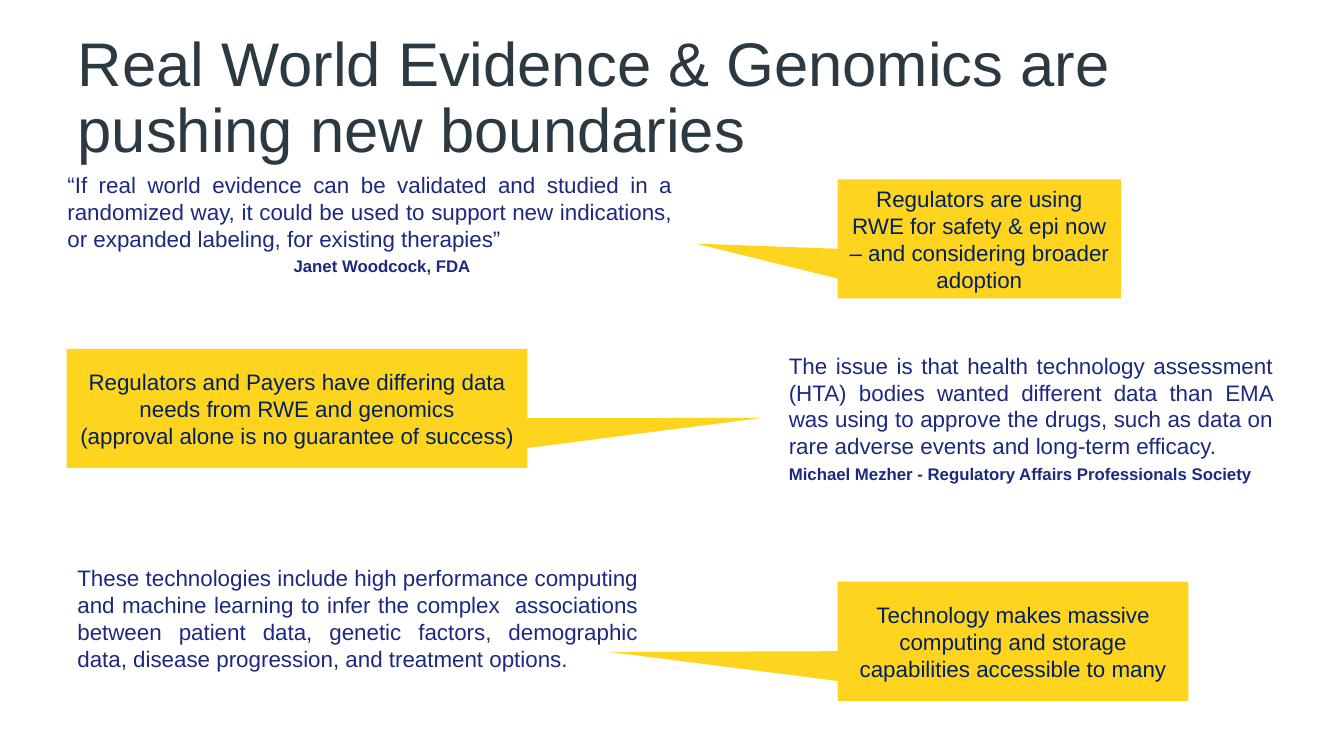
from dataclasses import dataclass

from pptx import Presentation
from pptx.dml.color import RGBColor
from pptx.enum.shapes import MSO_SHAPE
from pptx.enum.text import MSO_ANCHOR, MSO_AUTO_SIZE, PP_ALIGN
from pptx.util import Cm, Pt


@dataclass(frozen=True)
class Theme:
    font: str = "Arial"
    title_color: RGBColor = RGBColor(0x2B, 0x3A, 0x42)
    quote_color: RGBColor = RGBColor(0x1C, 0x29, 0x80)
    callout_color: RGBColor = RGBColor(0x00, 0x20, 0x60)
    callout_fill: RGBColor = RGBColor(0xFF, 0xD4, 0x1E)
    title_size: int = 44
    body_size: int = 16
    source_size: int = 12


@dataclass(frozen=True)
class Box:
    """Position and size in centimetres."""
    left: float
    top: float
    width: float
    height: float

    def lengths(self) -> tuple:
        return Cm(self.left), Cm(self.top), Cm(self.width), Cm(self.height)


@dataclass(frozen=True)
class Quote:
    box: Box
    text: str
    source: str = ""
    source_indent: float = 0
    has_margins: bool = True


@dataclass(frozen=True)
class Callout:
    """A box whose tip is offset from its centre in shares of its size."""
    box: Box
    tip: tuple[float, float]
    lines: tuple[str, ...]


THEME = Theme()
CALLOUT_HEIGHT = 3.0
RIGHT_CALLOUT_LEFT = 21.11

TITLE = "Real World Evidence & Genomics are pushing new boundaries"
TITLE_BOX = Box(1.7, 0.71, 30.48, 3.18)

QUOTES = (
    Quote(
        Box(1.7, 4.32, 15.24, 3.18),
        "“If real world evidence can be validated and studied in a randomized way, "
        "it could be used to support new indications, or expanded labeling, "
        "for existing therapies”",
        "Janet Woodcock, FDA",
        source_indent=5.7,
        has_margins=False,
    ),
    Quote(
        Box(19.63, 8.74, 12.7, 3.61),
        "The issue is that health technology assessment (HTA) bodies wanted "
        "different data than EMA was using to approve the drugs, such as data on "
        "rare adverse events and long-term efficacy.",
        "Michael Mezher - Regulatory Affairs Professionals Society",
    ),
    Quote(
        Box(1.7, 14.1, 14.63, 3.68),
        "These technologies include high performance computing and machine learning "
        "to infer the complex  associations between patient data, genetic factors, "
        "demographic data, disease progression, and treatment options.",
    ),
)

CALLOUTS = (
    Callout(
        Box(RIGHT_CALLOUT_LEFT, 4.52, 7.14, CALLOUT_HEIGHT),
        (-1.0, 0.04),
        ("Regulators are using RWE for safety & epi now – and considering broader adoption",),
    ),
    Callout(
        Box(1.68, 8.79, 11.61, CALLOUT_HEIGHT),
        (1.01, 0.08),
        (
            "Regulators and Payers have differing data needs from RWE and genomics",
            "(approval alone is no guarantee of success)",
        ),
    ),
    Callout(
        Box(RIGHT_CALLOUT_LEFT, 14.66, 8.84, CALLOUT_HEIGHT),
        (-1.15, 0.09),
        ("Technology makes massive computing and storage capabilities accessible to many",),
    ),
)


def write(paragraph, text: str, size: int, color: RGBColor, align: PP_ALIGN,
          bold: bool = False) -> None:
    paragraph.text = text
    paragraph.alignment = align
    font = paragraph.font
    font.name, font.size, font.bold = THEME.font, Pt(size), bold
    font.color.rgb = color


def fill_title(slide) -> None:
    title = slide.shapes.title
    title.left, title.top, title.width, title.height = TITLE_BOX.lengths()
    frame = title.text_frame
    frame.word_wrap = True
    frame.auto_size = MSO_AUTO_SIZE.NONE
    frame.vertical_anchor = MSO_ANCHOR.TOP
    heading = frame.paragraphs[0]
    write(heading, TITLE, THEME.title_size, THEME.title_color, PP_ALIGN.LEFT)
    heading.line_spacing = 0.9


def add_quote(slide, quote: Quote) -> None:
    frame = slide.shapes.add_textbox(*quote.box.lengths()).text_frame
    frame.word_wrap = True
    if not quote.has_margins:
        frame.margin_left = frame.margin_top = frame.margin_right = frame.margin_bottom = 0
    write(frame.paragraphs[0], quote.text, THEME.body_size, THEME.quote_color,
          PP_ALIGN.JUSTIFY)
    if quote.source:
        source = frame.add_paragraph()
        source._p.get_or_add_pPr().set("marL", str(Cm(quote.source_indent)))
        write(source, quote.source, THEME.source_size, THEME.quote_color,
              PP_ALIGN.JUSTIFY, bold=True)
        source.space_before = Pt(3)


def add_callout(slide, callout: Callout) -> None:
    shape = slide.shapes.add_shape(MSO_SHAPE.RECTANGULAR_CALLOUT, *callout.box.lengths())
    shape.adjustments[0], shape.adjustments[1] = callout.tip
    shape.shadow.inherit = False
    shape.fill.solid()
    shape.fill.fore_color.rgb = THEME.callout_fill
    shape.line.fill.background()
    frame = shape.text_frame
    frame.word_wrap = True
    frame.vertical_anchor = MSO_ANCHOR.MIDDLE
    for index, line in enumerate(callout.lines):
        paragraph = frame.add_paragraph() if index else frame.paragraphs[0]
        write(paragraph, line, THEME.body_size, THEME.callout_color, PP_ALIGN.CENTER)


def main() -> None:
    deck = Presentation()
    deck.slide_width, deck.slide_height = Cm(33.87), Cm(19.05)
    title_only = deck.slide_layouts.get_by_name("Title Only")
    slide = deck.slides.add_slide(title_only)
    fill_title(slide)
    for quote in QUOTES:
        add_quote(slide, quote)
    for callout in CALLOUTS:
        add_callout(slide, callout)
    deck.save("out.pptx")


if __name__ == "__main__":
    main()
